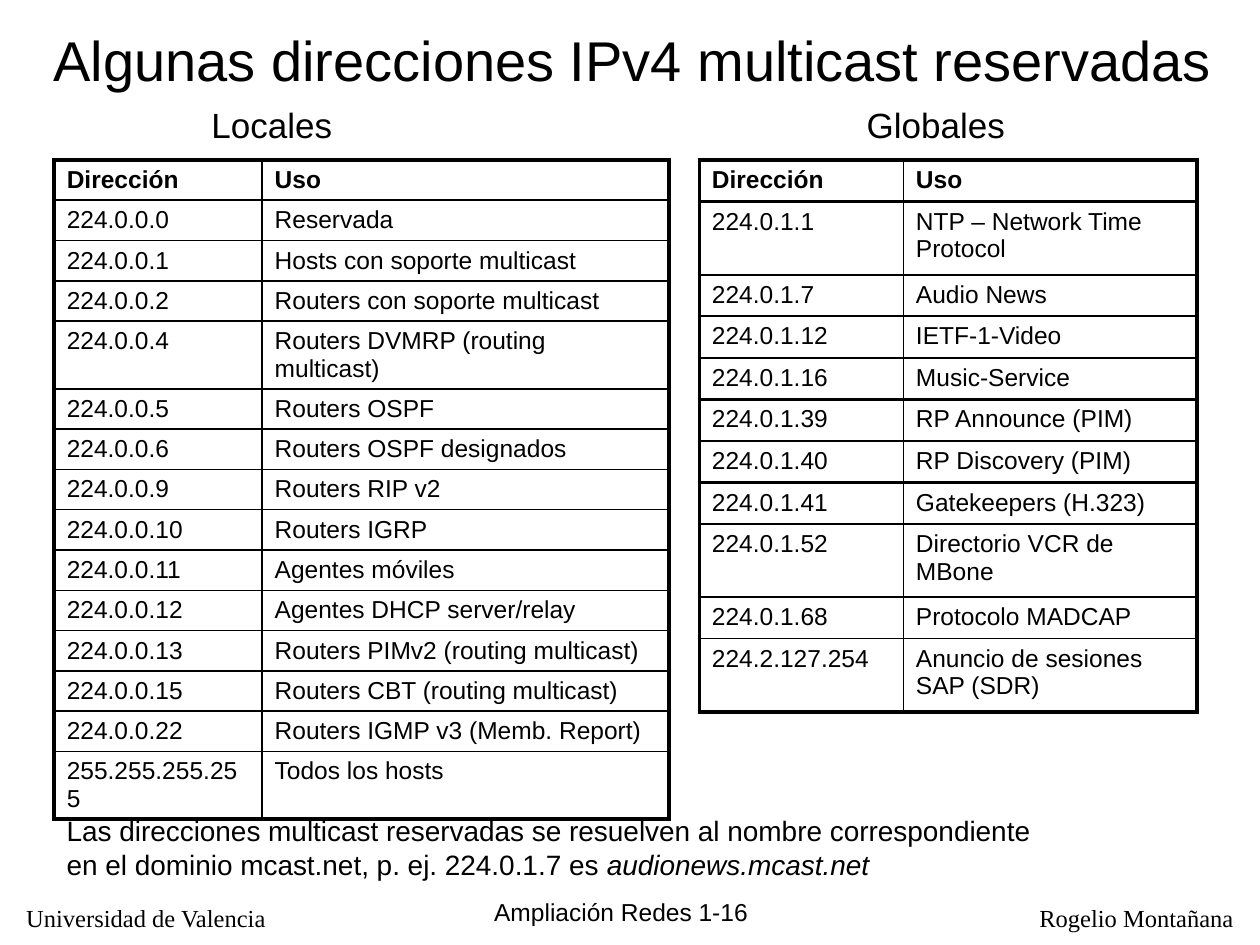
from dataclasses import dataclass

from lxml import etree
from pptx import Presentation
from pptx.dml.color import RGBColor
from pptx.enum import text
from pptx.oxml import ns
from pptx.util import Inches, Pt

BLACK = "000000"
OUTER, HEAVY, FINE = 2.25, 1.5, 1  # rule widths in points


@dataclass
class Label:
    box: tuple[float, float, float, float]
    runs: tuple[str, ...]  # the second run, if any, is italic
    size: int
    font: str = "Arial"
    centred: bool = False
    wrap: bool = True


@dataclass
class AddressTable:
    left: float
    columns: tuple[float, float]
    row_height: float
    tall_height: float
    tall_rows: tuple[int, ...]
    heavy_rules: int  # inner rules, from the top, drawn heavy
    rows: list[tuple[str, str]]


LABELS = [
    Label((0.11, 7.12, 2.13, 0.33), ("Universidad de Valencia",), 14, "Times New Roman", wrap=False),
    Label((8.15, 7.12, 1.74, 0.33), ("Rogelio Montañana",), 14, "Times New Roman", wrap=False),
    Label((3.76, 7.07, 2.34, 0.3), ("Ampliación Redes 1-16",), 14, centred=True),
    Label((0.01, 0.09, 10.03, 0.75), ("Algunas direcciones IPv4 multicast reservadas",), 32, centred=True),
    Label((1.58, 0.77, 1.17, 0.44), ("Locales",), 20, wrap=False),
    Label((6.78, 0.77, 1.31, 0.44), ("Globales",), 20, wrap=False),
    Label((0.43, 6.41, 7.95, 0.64),
          ("Las direcciones multicast reservadas se resuelven al nombre correspondiente "
           "en el dominio mcast.net, p. ej. 224.0.1.7 es ", "audionews.mcast.net"), 16),
]

HEADER = ("Dirección", "Uso")
LOCAL = AddressTable(0.43, (1.65, 3.23), 0.32, 0.53, (4, 14), 1, [
    HEADER,
    ("224.0.0.0", "Reservada"),
    ("224.0.0.1", "Hosts con soporte multicast"),
    ("224.0.0.2", "Routers con soporte multicast"),
    ("224.0.0.4", "Routers DVMRP (routing multicast)"),
    ("224.0.0.5", "Routers OSPF"),
    ("224.0.0.6", "Routers OSPF designados"),
    ("224.0.0.9", "Routers RIP v2"),
    ("224.0.0.10", "Routers IGRP"),
    ("224.0.0.11", "Agentes móviles"),
    ("224.0.0.12", "Agentes DHCP server/relay"),
    ("224.0.0.13", "Routers PIMv2 (routing multicast)"),
    ("224.0.0.15", "Routers CBT (routing multicast)"),
    ("224.0.0.22", "Routers IGMP v3 (Memb. Report)"),
    ("255.255.255.255", "Todos los hosts"),
])
GLOBAL = AddressTable(5.55, (1.62, 2.33), 0.33, 0.58, (1, 8, 10), 7, [
    HEADER,
    ("224.0.1.1", "NTP – Network Time Protocol"),
    ("224.0.1.7", "Audio News"),
    ("224.0.1.12", "IETF-1-Video"),
    ("224.0.1.16", "Music-Service"),
    ("224.0.1.39", "RP Announce (PIM)"),
    ("224.0.1.40", "RP Discovery (PIM)"),
    ("224.0.1.41", "Gatekeepers (H.323)"),
    ("224.0.1.52", "Directorio VCR de MBone"),
    ("224.0.1.68", "Protocolo MADCAP"),
    ("224.2.127.254", "Anuncio de sesiones SAP (SDR)"),
])


def set_font(font, size: int, name: str = "Arial", color: str = BLACK) -> None:
    font.size = Pt(size)
    font.name = name
    font.color.rgb = RGBColor.from_string(color)


def add_label(slide, label: Label) -> None:
    shape = slide.shapes.add_textbox(*map(Inches, label.box))
    frame = shape.text_frame
    frame.word_wrap = label.wrap
    frame.vertical_anchor = text.MSO_ANCHOR.MIDDLE if label.size == 32 else text.MSO_ANCHOR.TOP
    paragraph = frame.paragraphs[0]
    paragraph.alignment = text.PP_ALIGN.CENTER if label.centred else text.PP_ALIGN.LEFT
    set_font(paragraph.font, label.size, label.font)
    for index, words in enumerate(label.runs):
        run = paragraph.add_run()
        run.text = words
        if index:
            run.font.italic = True


def add_border(cell, side: str, width: float) -> None:
    properties = cell._tc.get_or_add_tcPr()
    line = etree.SubElement(properties, ns.qn(f"a:ln{side}"), w=str(Pt(width)))
    fill = etree.SubElement(line, ns.qn("a:solidFill"))
    etree.SubElement(fill, ns.qn("a:srgbClr"), val=BLACK)


def add_address_table(slide, data: AddressTable) -> None:
    count = len(data.rows)
    heights = [data.tall_height if row in data.tall_rows else data.row_height for row in range(count)]
    shape = slide.shapes.add_table(count, 2, Inches(data.left), Inches(1.27),
                                   Inches(sum(data.columns)), Inches(sum(heights)))
    table = shape.table
    table.first_row = table.horz_banding = False
    for column, width in zip(table.columns, data.columns):
        column.width = Inches(width)
    # Horizontal rules from the top edge to the bottom edge
    rules = [OUTER] + [HEAVY if row < data.heavy_rules else FINE for row in range(count - 1)] + [OUTER]
    verticals = [OUTER, FINE, OUTER]
    for row, words in enumerate(data.rows):
        table.rows[row].height = Inches(heights[row])
        for column, content in enumerate(words):
            cell = table.cell(row, column)
            cell.text = content
            font = cell.text_frame.paragraphs[0].font
            set_font(font, 14)
            font.bold = row == 0
            add_border(cell, "L", verticals[column])
            add_border(cell, "R", verticals[column + 1])
            add_border(cell, "T", rules[row])
            add_border(cell, "B", rules[row + 1])
            cell.fill.background()


def main() -> None:
    presentation = Presentation()
    presentation.slide_width, presentation.slide_height = Inches(10), Inches(7.5)
    slide = presentation.slides.add_slide(presentation.slide_layouts[6])

    # Address tables
    for data in (LOCAL, GLOBAL):
        add_address_table(slide, data)

    # Title, table headings, note and footer
    for label in LABELS:
        add_label(slide, label)

    presentation.save("out.pptx")


if __name__ == "__main__":
    main()
